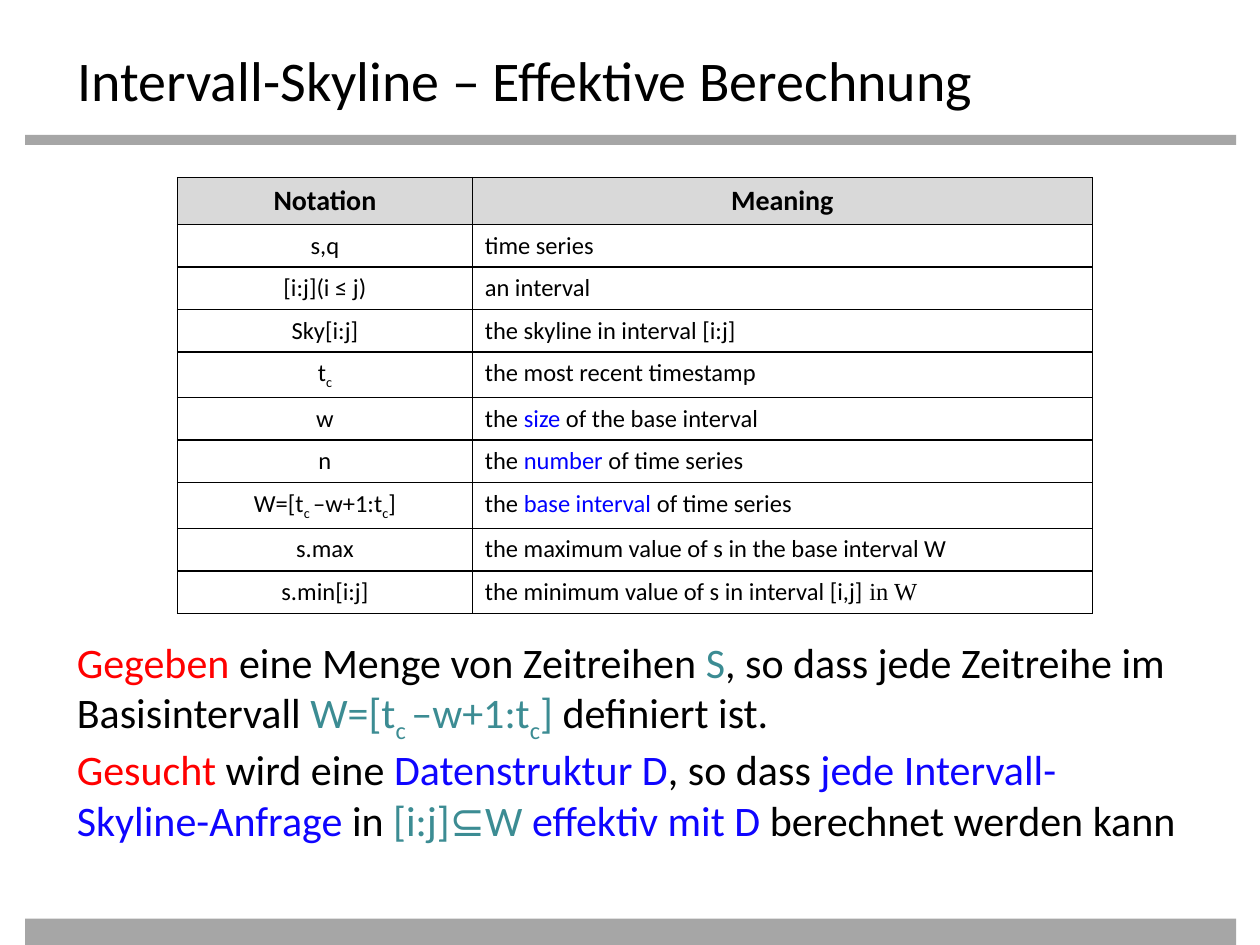
"""Build the slide on effective computation of interval skylines."""
from dataclasses import dataclass

from lxml import etree
from pptx import Presentation
from pptx.dml.color import RGBColor
from pptx.enum.shapes import MSO_SHAPE
from pptx.enum.text import MSO_ANCHOR, MSO_AUTO_SIZE, PP_ALIGN
from pptx.oxml.ns import qn
from pptx.util import Cm, Pt

RECTANGLE = MSO_SHAPE.RECTANGLE
TOP = MSO_ANCHOR.TOP
NO_AUTOFIT = MSO_AUTO_SIZE.NONE
LEFT, CENTER = PP_ALIGN.LEFT, PP_ALIGN.CENTER
TITLE_ONLY = 5


@dataclass(frozen=True)
class Theme:
    """Colours, fonts and type sizes of the slide."""

    ink: str = "000000"
    bar: str = "A6A6A6"
    header: str = "D9D9D9"
    keyword: str = "FF0000"
    symbol: str = "3C8C93"
    emphasis: str = "0F05FF"
    link: str = "0000FF"
    font: str = "Calibri"
    serif: str = "Times New Roman"
    title_size: int = 32
    body_size: int = 24
    header_size: int = 16
    cell_size: int = 14


THEME = Theme()


@dataclass(frozen=True)
class Span:
    """A piece of text with one look."""

    text: str
    color: str = THEME.ink
    subscript: bool = False
    font: str = THEME.font


def base_interval(color=THEME.ink):
    """Return the spans of the base interval formula."""
    return [Span("W=[t", color), Span("c ", color, True), Span("–w+1:t", color),
            Span("c", color, True), Span("]", color)]


def highlighted(before, word, after):
    """Return a phrase with one highlighted word."""
    return [Span(before), Span(word, THEME.link), Span(after)]


NOTATION = [
    ([Span("s,q")], [Span("time series")]),
    ([Span("[i:j](i ≤ j)")], [Span("an interval")]),
    ([Span("Sky[i:j]")], [Span("the skyline in interval [i:j]")]),
    ([Span("t"), Span("c", subscript=True)], [Span("the most recent timestamp")]),
    ([Span("w")], highlighted("the ", "size", " of the base interval")),
    ([Span("n")], highlighted("the ", "number", " of time series")),
    (base_interval(), highlighted("the ", "base interval ", "of time series")),
    ([Span("s.max")], [Span("the maximum value of s in the base interval W")]),
    ([Span("s.min[i:j]")],
     [Span("the minimum value of s in interval [i,j]"), Span(" in W", font=THEME.serif)]),
]

GIVEN = [
    Span("Gegeben", THEME.keyword), Span(" eine Menge von Zeitreihen "),
    Span("S", THEME.symbol), Span(", so dass jede Zeitreihe im Basisintervall "),
    *base_interval(THEME.symbol), Span(" definiert ist. "),
]

WANTED = [
    Span("Gesucht", THEME.keyword), Span(" wird eine "),
    Span("Datenstruktur D", THEME.emphasis), Span(", so dass "),
    Span("jede Intervall-Skyline-Anfrage ", THEME.emphasis), Span("in "),
    Span("[i:j]⊆W ", THEME.symbol), Span("effektiv mit D ", THEME.emphasis),
    Span("berechnet werden kann"),
]


def add_spans(paragraph, spans, size, bold=False):
    """Append styled runs to a paragraph."""
    for span in spans:
        run = paragraph.add_run()
        run.text = span.text
        run.font.name = span.font
        run.font.size = Pt(size)
        run.font.bold = bold
        run.font.color.rgb = RGBColor.from_string(span.color)
        if span.subscript:
            run._r.get_or_add_rPr().set("baseline", "-25000")


def add_bar(slide, top, height):
    """Draw a grey bar across the slide."""
    bar = slide.shapes.add_shape(RECTANGLE, Cm(0.51), top, Cm(24.41), height)
    bar.shadow.inherit = False
    bar.fill.solid()
    bar.fill.fore_color.rgb = RGBColor.from_string(THEME.bar)
    bar.line.fill.background()


def set_title(slide, text):
    """Place and format the title placeholder."""
    title = slide.shapes.title
    title.left, title.top, title.width, title.height = Cm(1.3), Cm(0.71), Cm(22.86), Cm(1.4)
    frame = title.text_frame
    frame.auto_size = NO_AUTOFIT
    frame.vertical_anchor = TOP
    frame.margin_top, frame.margin_bottom = Cm(0.2), Cm(0)
    paragraph = frame.paragraphs[0]
    paragraph.alignment = LEFT
    add_spans(paragraph, [Span(text)], THEME.title_size)


def add_borders(cell):
    """Give a cell thin lines on all four sides."""
    properties = cell._tc.get_or_add_tcPr()
    for position, side in enumerate(("a:lnL", "a:lnR", "a:lnT", "a:lnB")):
        line = etree.Element(qn(side), w=str(Pt(1)))
        fill = etree.SubElement(line, qn("a:solidFill"))
        etree.SubElement(fill, qn("a:srgbClr"), val=THEME.ink)
        properties.insert(position, line)


def fill_cell(cell, spans, alignment, is_header):
    """Write and format one table cell."""
    if is_header:
        cell.fill.solid()
        cell.fill.fore_color.rgb = RGBColor.from_string(THEME.header)
    else:
        cell.fill.background()
    add_borders(cell)
    paragraph = cell.text_frame.paragraphs[0]
    paragraph.alignment = alignment
    size = THEME.header_size if is_header else THEME.cell_size
    add_spans(paragraph, spans, size, bold=is_header)


def add_notation_table(slide):
    """Add the table of symbols and their meanings."""
    rows = [([Span("Notation")], [Span("Meaning")]), *NOTATION]
    widths = (Cm(5.94), Cm(12.5))
    row_height = Cm(0.84)
    table = slide.shapes.add_table(len(rows), len(widths), Cm(3.58), Cm(3.58),
                                   sum(widths), row_height * len(rows)).table
    table.first_row = table.horz_banding = False
    for column, width in zip(table.columns, widths):
        column.width = width
    for row_index, row in enumerate(rows):
        is_header = row_index == 0
        alignments = (CENTER, CENTER if is_header else LEFT)
        for column_index, (spans, alignment) in enumerate(zip(row, alignments)):
            fill_cell(table.cell(row_index, column_index), spans, alignment, is_header)


def add_problem_statement(slide):
    """Add the text with the given data and the wanted structure."""
    frame = slide.shapes.add_textbox(Cm(1.3), Cm(12.7), Cm(22.86), Cm(4.37)).text_frame
    frame.word_wrap = True
    paragraph = frame.paragraphs[0]
    add_spans(paragraph, GIVEN, THEME.body_size)
    paragraph.add_line_break()
    add_spans(paragraph, WANTED, THEME.body_size)


def main():
    """Create and save the presentation."""
    presentation = Presentation()
    presentation.slide_width, presentation.slide_height = Cm(25.4), Cm(19.05)
    slide = presentation.slides.add_slide(presentation.slide_layouts[TITLE_ONLY])
    add_bar(slide, Cm(2.72), Cm(0.2))
    add_bar(slide, Cm(18.52), Cm(0.53))
    set_title(slide, "Intervall-Skyline – Effektive Berechnung")
    add_notation_table(slide)
    add_problem_statement(slide)
    presentation.save("out.pptx")


if __name__ == "__main__":
    main()
